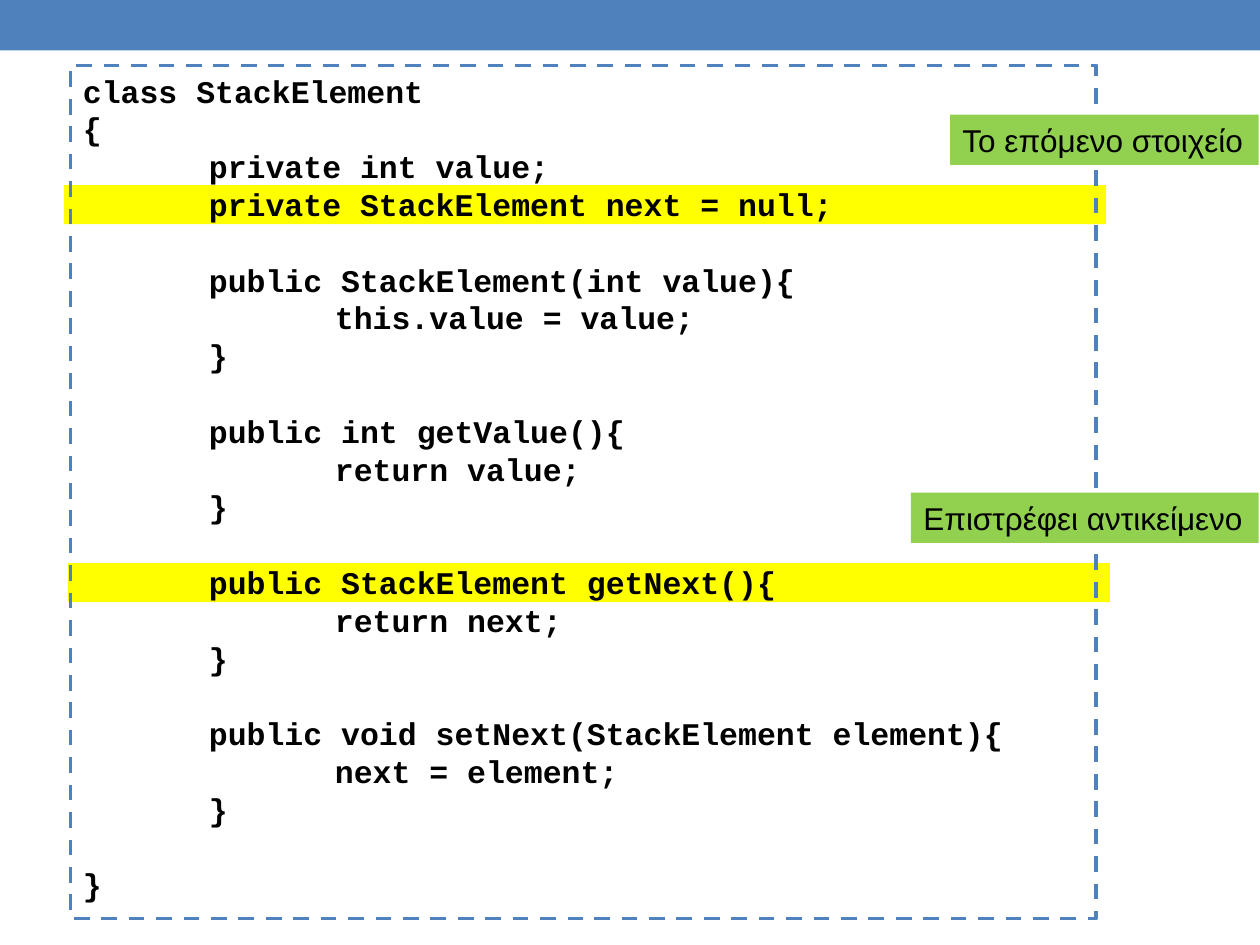
import lxml.etree
import pptx
import pptx.dml.color
import pptx.enum.dml
import pptx.enum.shapes
import pptx.enum.text
import pptx.oxml.ns
import pptx.util

RGBColor = pptx.dml.color.RGBColor
BLUE = RGBColor(0x4F, 0x81, 0xBD)
YELLOW = RGBColor(0xFF, 0xFF, 0x00)
GREEN = RGBColor(0x92, 0xD0, 0x50)
BLACK = RGBColor(0x00, 0x00, 0x00)

WIDTH, HEIGHT = 10, 7.5
LINE_PITCH = 21.6  # points; equals 0.3 inch
ROW = LINE_PITCH / 72

# Groups of code lines, separated by one empty line
CODE = [
    ["class StackElement", "{", "\tprivate int value;",
     "\tprivate StackElement next = null;"],
    ["\tpublic StackElement(int value){", "\t\tthis.value = value;", "\t}"],
    ["\tpublic int getValue(){", "\t\treturn value;", "\t}"],
    ["\tpublic StackElement getNext(){", "\t\treturn next;", "\t}"],
    ["\tpublic void setNext(StackElement element){", "\t\tnext = element;", "\t}"],
    ["}"],
]

# Code row, left edge of its highlight, label text, label width
NOTES = [
    (3, 0.51, "Το επόμενο στοιχείο", 2.45),
    (13, 0.54, "Επιστρέφει αντικείμενο", 2.76),
]


def add_box(slide, box, fill=None):
    """Add a rectangle without shadow or outline; box is in inches."""
    sp = slide.shapes.add_shape(pptx.enum.shapes.MSO_SHAPE.RECTANGLE,
                                *map(pptx.util.Inches, box))
    sp.shadow.inherit = False
    sp.line.fill.background()
    if fill is None:
        sp.fill.background()
    else:
        sp.fill.solid()
        sp.fill.fore_color.rgb = fill
    return sp


def write_line(p, text, font, bold=False):
    p.text = text
    p.alignment = pptx.enum.text.PP_ALIGN.LEFT
    for r in p.runs:
        r.font.name = font
        r.font.size = pptx.util.Pt(18)
        r.font.bold = bold
        r.font.color.rgb = BLACK


def set_tabs(p, *stops):
    """Set left tab stops, in inches."""
    qn = pptx.oxml.ns.qn
    tabs = lxml.etree.SubElement(p._p.get_or_add_pPr(), qn("a:tabLst"))
    for stop in stops:
        lxml.etree.SubElement(tabs, qn("a:tab"), algn="l",
                              pos=str(pptx.util.Inches(stop)))


def add_code(slide, box):
    sp = add_box(slide, box)
    sp.line.color.rgb = BLUE
    sp.line.width = pptx.util.Pt(2.25)
    sp.line.dash_style = pptx.enum.dml.MSO_LINE.DASH
    tf = sp.text_frame
    tf.word_wrap = True
    tf.vertical_anchor = pptx.enum.text.MSO_ANCHOR.TOP
    for g, group in enumerate(CODE):
        for i, line in enumerate(group):
            p = tf.paragraphs[0] if g == i == 0 else tf.add_paragraph()
            write_line(p, line, "Courier New", bold=True)
            p.line_spacing = pptx.util.Pt(LINE_PITCH)
            if g and i == 0:
                p.space_before = pptx.util.Pt(LINE_PITCH)
            set_tabs(p, 1, 2)


def add_highlights(slide, box):
    """Mark the noted code rows behind the code box."""
    top = box[1] + 0.05
    for row, left, _, _ in NOTES:
        add_box(slide, (left, top + row * ROW, 8.27, 0.31), YELLOW)


def add_labels(slide, box):
    """Put labels at the right edge, two rows above the noted code rows."""
    for row, _, text, width in NOTES:
        top = box[1] + (row - 2) * ROW + 0.09
        sp = add_box(slide, (WIDTH - 0.01 - width, top, width, 0.4), GREEN)
        tf = sp.text_frame
        tf.word_wrap = False
        tf.vertical_anchor = pptx.enum.text.MSO_ANCHOR.MIDDLE
        write_line(tf.paragraphs[0], text, "Arial")


def main():
    prs = pptx.Presentation()
    prs.slide_width = pptx.util.Inches(WIDTH)
    prs.slide_height = pptx.util.Inches(HEIGHT)
    slide = prs.slides.add_slide(prs.slide_layouts[6])
    code_box = (0.56, 0.52, 8.14, 6.77)
    add_box(slide, (0, 0, WIDTH, 0.4), BLUE)
    add_highlights(slide, code_box)
    add_code(slide, code_box)
    add_labels(slide, code_box)
    prs.save("out.pptx")


if __name__ == "__main__":
    main()
